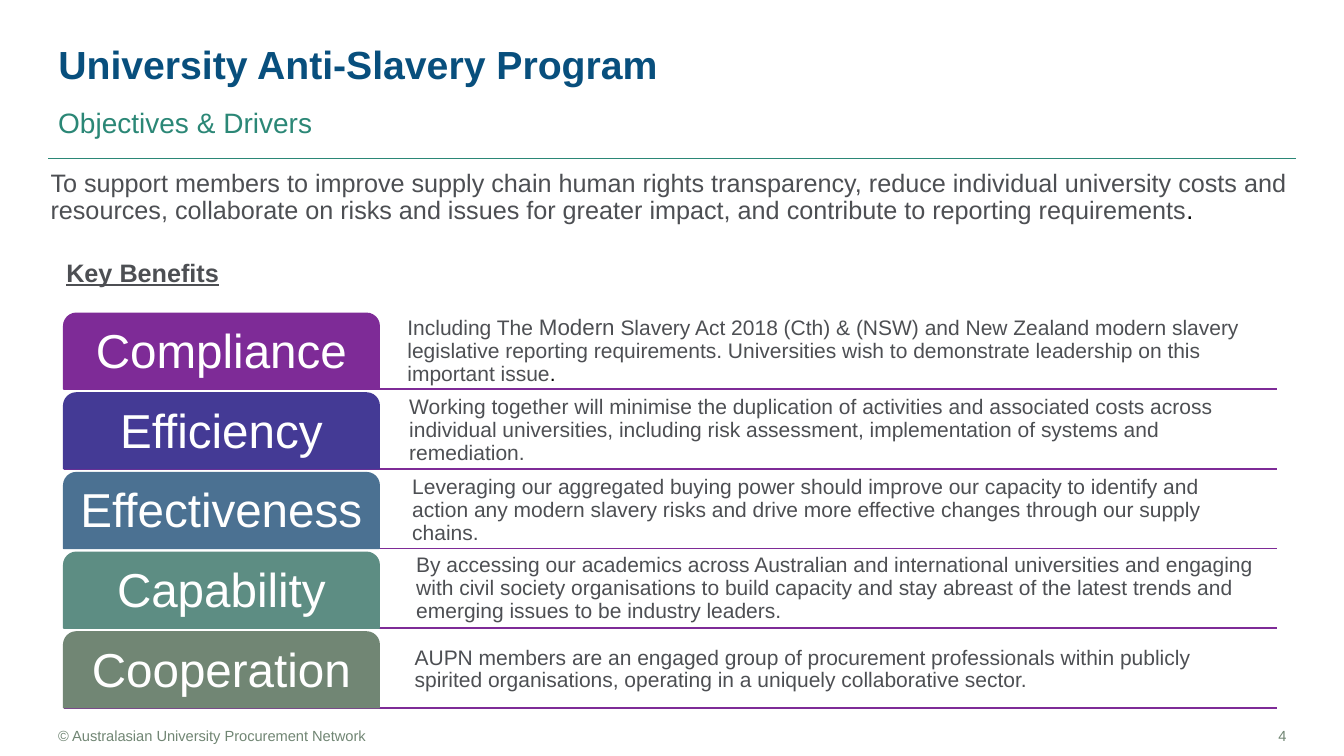
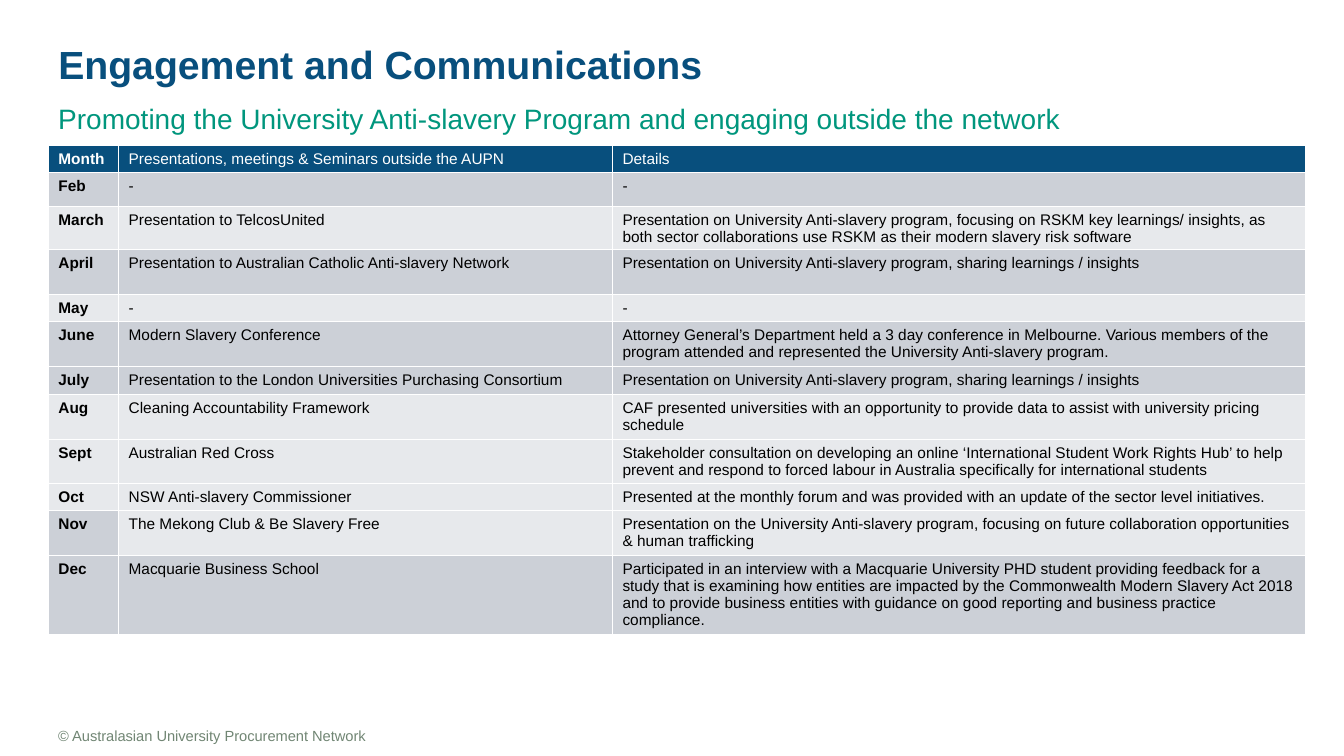
from lxml import etree
from pptx import Presentation
from pptx.dml.color import RGBColor
from pptx.enum import shapes, text
from pptx.oxml import ns
from pptx.util import Pt

NAVY, GREEN, TEAL, SAGE = "084F7D", "2B8776", "00967D", "718674"
GREY, BLACK, WHITE, PURPLE = "4D4F53", "000000", "FFFFFF", "7E2B97"
DARK, LIGHT = "CCD0D7", "E7E9EC"
EDGE, FOOT, FOOT_HEIGHT = 34.5, 511, 29
paint = RGBColor.from_string
MIDDLE = text.MSO_ANCHOR.MIDDLE


def write(frame, spans, size, color, layout=None, spacing=None, align=None, **font):
    for name, value in {"word_wrap": True, **(layout or {})}.items():
        setattr(frame, name, value)
    para = frame.paragraphs[0]
    para.line_spacing, para.alignment = spacing, align
    for words, changes in spans:
        span = para.add_run()
        span.text = words
        look = {"name": "Arial", "size": Pt(size), "bold": False, **font, **changes}
        span.font.color.rgb = paint(look.pop("color", color))
        for name, value in look.items():
            setattr(span.font, name, value)


def rule(page, left, right, top, color):
    line = page.shapes.add_connector(
        shapes.MSO_CONNECTOR.STRAIGHT, Pt(left), Pt(top), Pt(right), Pt(top))
    line.line.color.rgb = paint(color)
    line.line.width = Pt(1)
    etree.SubElement(line._element.spPr, ns.qn("a:effectLst"))


deck = Presentation()
deck.slide_width, deck.slide_height = Pt(960), Pt(540)

headings = [
    ("University Anti-Slavery Program", "Objectives & Drivers", GREEN, 74.3, 675),
    ("Engagement and Communications",
     "Promoting the University Anti-slavery Program and engaging outside the network",
     TEAL, 72, 900),
]
pages = []
for heading, subtitle, color, top, width in headings:
    page = deck.slides.add_slide(deck.slide_layouts[5])
    pages.append(page)
    rule(page, EDGE, 926, 113.2, GREEN)
    title = page.shapes.title
    place = {"left": EDGE, "top": 29, "width": 675, "height": 43}
    for name, value in place.items():
        setattr(title, name, Pt(value))
    write(title.text_frame, [(heading, {})], 28, NAVY,
          {"vertical_anchor": text.MSO_ANCHOR.TOP, "auto_size": text.MSO_AUTO_SIZE.NONE},
          0.9, text.PP_ALIGN.LEFT, bold=True)
    box = page.shapes.add_textbox(Pt(EDGE), Pt(top), Pt(width), Pt(30))
    write(box.text_frame, [(subtitle, {})], 20, color, spacing=0.9)
    box = page.shapes.add_textbox(Pt(EDGE), Pt(FOOT), Pt(324), Pt(FOOT_HEIGHT))
    write(box.text_frame, [("© Australasian University Procurement Network", {})],
          10.5, SAGE, {"vertical_anchor": MIDDLE})

program, engagement = pages

box = program.shapes.add_textbox(Pt(710), Pt(FOOT), Pt(216), Pt(FOOT_HEIGHT))
write(box.text_frame, [("4", {})], 10.5, SAGE, {"vertical_anchor": MIDDLE},
      align=text.PP_ALIGN.RIGHT)
box = program.shapes.add_textbox(Pt(29), Pt(118.3), Pt(902), Pt(61))
write(box.text_frame, [
    ("To support members to improve supply chain human rights transparency, reduce "
     "individual university costs and resources, collaborate on risks and issues for "
     "greater impact, and contribute to reporting requirements", {}),
    (".", {"color": BLACK})], 18, GREY, spacing=0.9)
box = program.shapes.add_textbox(Pt(40.3), Pt(180), Pt(266), Pt(29))
write(box.text_frame, [("Key Benefits", {})], 18, GREY, bold=True, underline=True)

benefits = [
    ("Compliance", PURPLE, 291, 603, 0, [
        ("Including The ", {}), ("Modern", {"size": Pt(16)}),
        (" Slavery Act 2018 (Cth) & (NSW) and New Zealand modern slavery legislative "
         "reporting requirements. Universities wish to demonstrate leadership on this "
         "important issue", {}), (".", {"color": BLACK})]),
    ("Efficiency", "443A95", 292.3, 600, 0, [
        ("Working together will minimise the duplication of activities and associated "
         "costs across individual universities, including risk assessment, "
         "implementation of systems and remediation.", {})]),
    ("Effectiveness", "4B7192", 294.5, 596, 0, [
        ("Leveraging our aggregated buying power should improve our capacity to identify "
         "and action any modern slavery risks and drive more effective changes through "
         "our supply chains.", {})]),
    ("Capability", "5D8D83", 297.3, 610, 1, [
        ("By accessing our academics across Australian and international universities "
         "and engaging with civil society organisations to build capacity and stay "
         "abreast of the latest trends and emerging issues to be industry leaders.", {})]),
    ("Cooperation", SAGE, 296.2, 592, 0, [
        ("AUPN members are an engaged group of procurement professionals within publicly "
         "spirited organisations, operating in a uniquely collaborative sector.", {})]),
]
TAB_LEFT, TAB_TOP, TAB_WIDTH, TAB_HEIGHT, TAB_STEP = 45.5, 223.8, 225.4, 54.2, 56.9
flush = {f"margin_{side}": 0 for side in ("left", "top", "right", "bottom")}
for index, (label, color, left, width, lift, spans) in enumerate(benefits):
    top = TAB_TOP + index * TAB_STEP
    rule(program, TAB_LEFT, 912, top + TAB_HEIGHT, PURPLE)
    tab = program.shapes.add_shape(
        shapes.MSO_SHAPE.ROUND_2_SAME_RECTANGLE,
        Pt(TAB_LEFT), Pt(top), Pt(TAB_WIDTH), Pt(TAB_HEIGHT))
    tab.shadow.inherit = False
    tab.fill.solid()
    tab.fill.fore_color.rgb = tab.line.color.rgb = paint(color)
    tab.line.width = Pt(1)
    write(tab.text_frame, [(label, {})], 34, WHITE,
          {**flush, "vertical_anchor": MIDDLE}, 0.9, text.PP_ALIGN.CENTER)
    box = program.shapes.add_textbox(Pt(left), Pt(top - lift), Pt(width), Pt(TAB_HEIGHT))
    write(box.text_frame, spans, 15, GREY, {**flush, "vertical_anchor": MIDDLE}, 0.9)

SHARING = "Presentation on University Anti-slavery program, sharing learnings / insights"
rows = [
    (19, NAVY, NAVY, "Month", "Presentations, meetings & Seminars outside the AUPN", "Details"),
    (24.3, DARK, DARK, "Feb", "-", "-"),
    (31.1, LIGHT, LIGHT, "March", "Presentation to TelcosUnited",
     "Presentation on University Anti-slavery program, focusing on RSKM key learnings/ "
     "insights, as both sector collaborations use RSKM as their modern slavery risk software"),
    (32, DARK, DARK, "April", "Presentation to Australian Catholic Anti-slavery Network", SHARING),
    (19.3, LIGHT, LIGHT, "May", "-", "-"),
    (32, DARK, DARK, "June", "Modern Slavery Conference",
     "Attorney General’s Department held a 3 day conference in Melbourne. Various members "
     "of the program attended and represented the University Anti-slavery program."),
    (20.4, DARK, DARK, "July", "Presentation to the London Universities Purchasing Consortium",
     SHARING),
    (31.8, LIGHT, LIGHT, "Aug", "Cleaning Accountability Framework",
     "CAF presented universities with an opportunity to provide data to assist with "
     "university pricing schedule"),
    (31.8, LIGHT, LIGHT, "Sept", "Australian Red Cross",
     "Stakeholder consultation on developing an online ‘International Student Work Rights "
     "Hub’ to help prevent and respond to forced labour in Australia specifically for "
     "international students"),
    (19.3, LIGHT, LIGHT, "Oct", "NSW Anti-slavery Commissioner",
     "Presented at the monthly forum and was provided with an update of the sector level "
     "initiatives."),
    (31.8, DARK, LIGHT, "Nov", "The Mekong Club & Be Slavery Free",
     "Presentation on the University Anti-slavery program, focusing on future collaboration "
     "opportunities & human trafficking"),
    (55.7, DARK, DARK, "Dec", "Macquarie Business School",
     "Participated in an interview with a Macquarie University PHD student providing "
     "feedback for a study that is examining how entities are impacted by the Commonwealth "
     "Modern Slavery Act 2018 and to provide business entities with guidance on good "
     "reporting and business practice compliance."),
]
widths = [50.2, 352.8, 495]
table = engagement.shapes.add_table(
    len(rows), len(widths), Pt(EDGE), Pt(104), Pt(sum(widths)),
    Pt(sum(row[0] for row in rows))).table
for column, width in zip(table.columns, widths):
    column.width = Pt(width)
for index, (height, month_fill, fill, *words) in enumerate(rows):
    table.rows[index].height = Pt(height)
    for position, content in enumerate(words):
        cell = table.cell(index, position)
        cell.margin_bottom, cell.margin_right = 0, Pt(6)
        write(cell.text_frame, [(content, {})], 11, BLACK if index else WHITE,
              bold=position == 0)
        borders = cell._tc.get_or_add_tcPr()
        for side in ("lnL", "lnR", "lnT", "lnB"):
            border = etree.SubElement(borders, ns.qn(f"a:{side}"), w=str(Pt(1)))
            solid = etree.SubElement(border, ns.qn("a:solidFill"))
            etree.SubElement(solid, ns.qn("a:srgbClr"), val=WHITE)
        cell.fill.solid()
        cell.fill.fore_color.rgb = paint(fill if position else month_fill)

deck.save("out.pptx")
